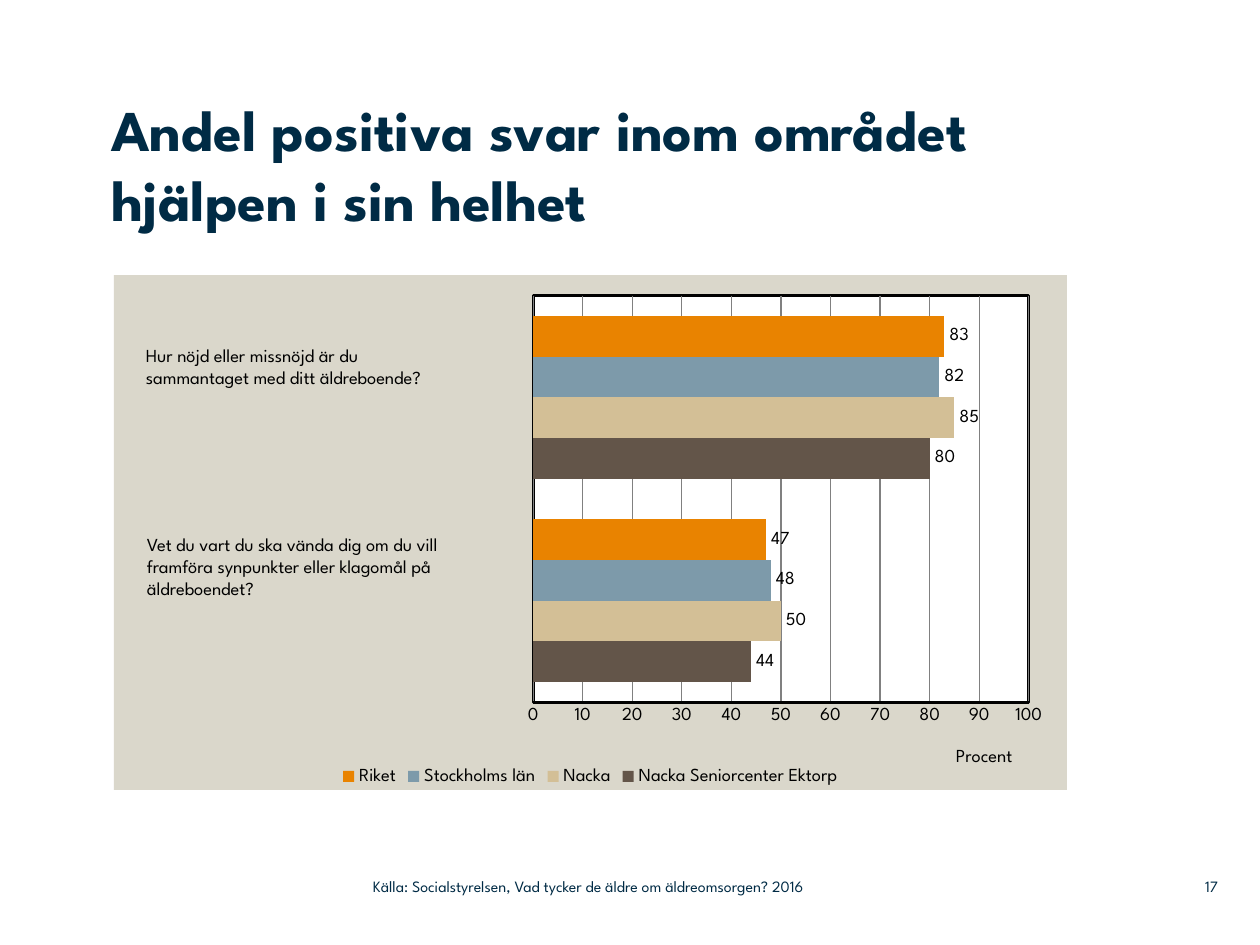
from lxml import etree
from pptx import Presentation
from pptx.chart.data import CategoryChartData
from pptx.dml.color import RGBColor
from pptx.enum.chart import (XL_CHART_TYPE, XL_LABEL_POSITION,
                             XL_LEGEND_POSITION, XL_TICK_MARK)
from pptx.enum.text import MSO_ANCHOR, MSO_AUTO_SIZE, PP_ALIGN
from pptx.oxml import parse_xml
from pptx.oxml.ns import nsdecls, qn
from pptx.util import Emu, Pt

FONT = "League Spartan"
NAVY, BLACK, GREY = "002B45", "000000", "808080"
PANEL, WHITE = "DAD7CB", "FFFFFF"
SERIES = [
    ("Nacka Seniorcenter Ektorp", (44, 80), "635549"),
    ("Nacka", (50, 85), "D3BF96"),
    ("Stockholms län", (48, 82), "7D9AAA"),
    ("Riket", (47, 83), "E98300"),
]


def px(n):
    return Emu(round(n * 914400 / 126))


def rgb(value):
    return RGBColor.from_string(value)


def set_attrs(obj, values):
    for name, value in values.items():
        setattr(obj, name, value)


def set_font(font, size, color, bold=False):
    set_attrs(font, {"name": FONT, "size": Pt(size), "bold": bold})
    font.color.rgb = rgb(color)


def place(sp, box):
    names = ("left", "top", "width", "height")
    set_attrs(sp, dict(zip(names, map(px, box))))


def fill_frame(tf, lines, size, color, bold=False, align=PP_ALIGN.LEFT,
               anchor=MSO_ANCHOR.TOP, inset=(0, 0)):
    side, end = map(px, inset)
    set_attrs(tf, {
        "word_wrap": True, "auto_size": MSO_AUTO_SIZE.NONE,
        "vertical_anchor": anchor, "margin_left": side,
        "margin_right": side, "margin_top": end, "margin_bottom": end,
    })
    for i, line in enumerate(lines):
        p = tf.add_paragraph() if i else tf.paragraphs[0]
        p.alignment = align
        r = p.add_run()
        r.text = line
        set_font(r.font, size, color, bold)


def add_title(s, text, box):
    place(s.shapes.title, box)
    fill_frame(s.shapes.title.text_frame, [text], 33, NAVY, bold=True)


def add_text(s, lines, box, size, color, **options):
    sp = s.shapes.add_textbox(*map(px, box))
    fill_frame(sp.text_frame, lines, size, color, **options)


def shape_props(fill, line=None, width=0):
    border = (f'<a:ln w="{Pt(width)}"><a:solidFill><a:srgbClr val="{line}"/>'
              '</a:solidFill></a:ln>' if line else '<a:ln><a:noFill/></a:ln>')
    return parse_xml(f'<c:spPr {nsdecls("c", "a")}><a:solidFill>'
                     f'<a:srgbClr val="{fill}"/></a:solidFill>{border}</c:spPr>')


def set_layout(parent, target=None, **values):
    """Give a chart part a manual position in fractions of the chart."""
    for old in parent.findall(qn("c:layout")):
        parent.remove(old)
    layout = etree.Element(qn("c:layout"))
    manual = etree.SubElement(layout, qn("c:manualLayout"))
    items = {"layoutTarget": target} if target else {}
    items |= {"xMode": "edge", "yMode": "edge", **values}
    for name, value in items.items():
        etree.SubElement(manual, qn(f"c:{name}")).set("val", str(value))
    text = parent.find(qn("c:tx"))
    if text is None:
        parent.insert(0, layout)
    else:
        text.addnext(layout)


def format_value_axis(axis):
    set_attrs(axis, {
        "minimum_scale": 0, "maximum_scale": 100, "major_unit": 10,
        "major_tick_mark": XL_TICK_MARK.NONE,
        "minor_tick_mark": XL_TICK_MARK.NONE, "has_major_gridlines": True,
    })
    for line, color, width in ((axis.format.line, BLACK, 2),
                               (axis.major_gridlines.format.line, GREY, 0.75)):
        line.color.rgb = rgb(color)
        line.width = Pt(width)
    set_font(axis.tick_labels.font, 10.5, BLACK)
    title = axis.axis_title
    title.text_frame.text = "Procent"
    set_font(title.text_frame.paragraphs[0].runs[0].font, 10.5, BLACK)
    set_layout(title._element, x=0.88, y=0.91)


def format_series(ser, color):
    ser.format.fill.solid()
    ser.format.fill.fore_color.rgb = rgb(color)
    ser.format.line.fill.background()
    labels = ser.data_labels
    set_attrs(labels, {"show_value": True,
                       "position": XL_LABEL_POSITION.OUTSIDE_END})
    set_font(labels.font, 10.5, BLACK)


def add_bar_chart(s, box):
    data = CategoryChartData()
    data.categories = ["1", "2"]
    for name, values, _ in SERIES:
        data.add_series(name, values)
    chart = s.shapes.add_chart(
        XL_CHART_TYPE.BAR_CLUSTERED, *map(px, box), data).chart
    set_attrs(chart, {"has_title": False, "has_legend": True})
    set_font(chart.font, 10.5, BLACK)
    set_attrs(chart.legend, {"position": XL_LEGEND_POSITION.BOTTOM,
                             "include_in_layout": False})
    set_font(chart.legend.font, 10.5, BLACK)

    # Bars and axes
    plot = chart.plots[0]
    set_attrs(plot, {"gap_width": 100, "overlap": 0, "vary_by_categories": False})
    for ser, (_, _, color) in zip(plot.series, SERIES):
        format_series(ser, color)
    chart.category_axis.visible = False
    format_value_axis(chart.value_axis)

    # Panel and plot area
    space = chart._chartSpace
    space.chart.addnext(shape_props(PANEL))
    area = space.chart.plotArea
    set_layout(area, "inner", x=0.44, y=0.04, w=0.52, h=0.79)
    area.append(shape_props(WHITE, BLACK, 2))


def main():
    prs = Presentation()
    set_attrs(prs, {"slide_width": px(1260), "slide_height": px(945)})
    s = prs.slides.add_slide(prs.slide_layouts[5])

    # Title and chart
    add_title(s, "Andel positiva svar inom området hjälpen i sin helhet",
              (111, 94, 958, 179))
    add_bar_chart(s, (114, 275, 953, 515))

    # Questions beside the bars
    questions = [
        (["Hur nöjd eller missnöjd är du",
          "sammantaget med ditt äldreboende?"], (133, 338, 375, 57)),
        (["Vet du vart du ska vända dig om du vill framföra synpunkter "
          "eller klagomål på äldreboendet?"], (134, 527, 374, 79)),
    ]
    for lines, box in questions:
        add_text(s, lines, box, 10.5, BLACK, inset=(13, 6))

    # Footer
    middle = MSO_ANCHOR.MIDDLE
    add_text(s, ["17"], (1159, 868, 59, 37), 9, NAVY,
             align=PP_ALIGN.RIGHT, anchor=middle)
    add_text(s, ["Källa: Socialstyrelsen, Vad tycker de äldre om "
                 "äldreomsorgen? 2016"], (373, 868, 558, 37), 9, NAVY,
             anchor=middle)
    prs.save("out.pptx")


if __name__ == "__main__":
    main()
